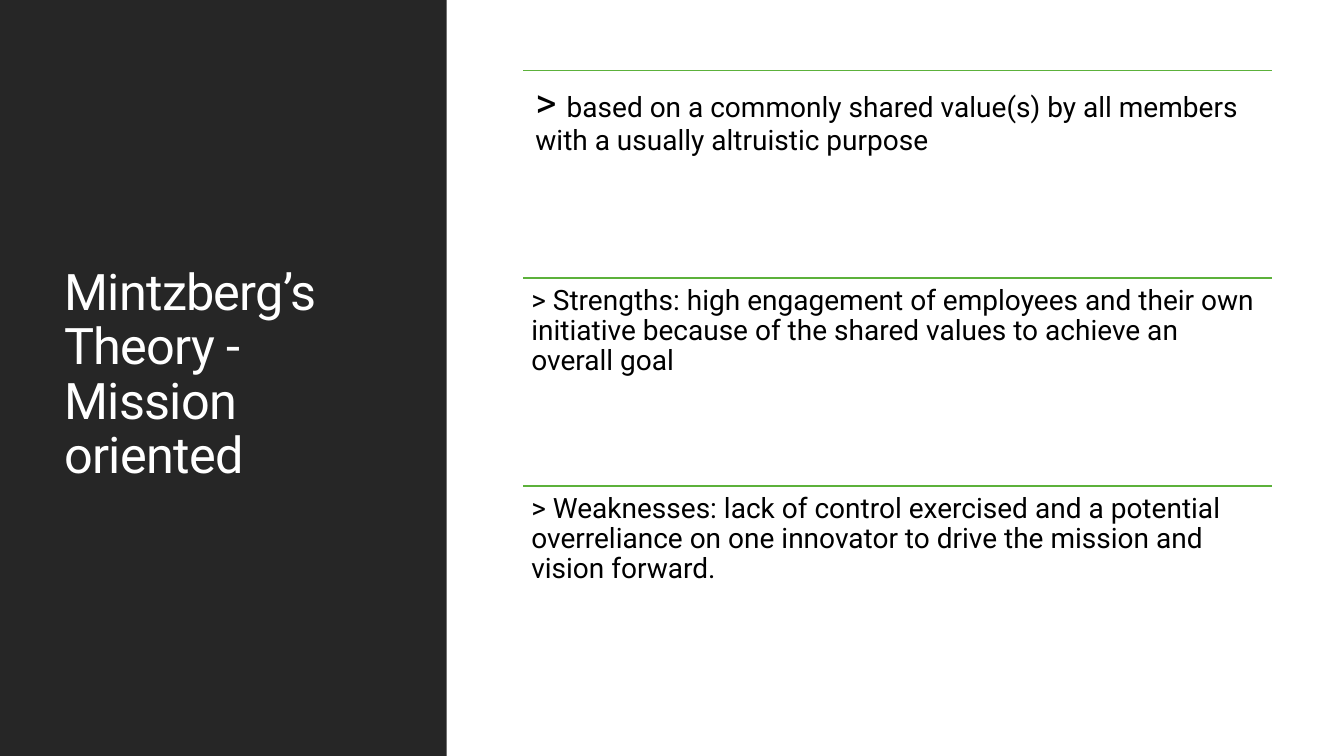
from pptx import Presentation
from pptx.dml.color import RGBColor as Rgb
from pptx.enum.shapes import MSO_CONNECTOR as Conn, MSO_SHAPE as Shape
from pptx.enum.text import MSO_ANCHOR as Anchor
from pptx.util import Inches, Pt
from lxml.etree import SubElement
from pptx.oxml.ns import qn


class Deck:
    """Holds the style and the current slide, and draws each kind of element."""

    font = "Roboto"
    colors = {"dark": "262626", "green": "5CB13B", "white": "FFFFFF", "black": "000000"}

    def __init__(self):
        self.file = Presentation()
        self.file.slide_width = Inches(13.33)
        self.file.slide_height = Inches(7.5)
        self.slide = self.file.slides.add_slide(self.file.slide_layouts[6])

    def color(self, name):
        return Rgb.from_string(self.colors[name])

    def panel(self, x, y, w, h, fill):
        box = self.slide.shapes.add_shape(
            Shape.RECTANGLE, Inches(x), Inches(y), Inches(w), Inches(h))
        box.shadow.inherit = False
        box.fill.solid()
        box.fill.fore_color.rgb = self.color(fill)
        box.line.fill.background()

    def rule(self, x, y, w):
        line = self.slide.shapes.add_connector(
            Conn.STRAIGHT, Inches(x), Inches(y), Inches(x + w), Inches(y))
        line.line.color.rgb = self.color("green")
        line.line.width = Pt(1.25)
        SubElement(line._element.spPr, qn("a:effectLst"))

    def text(self, x, y, w, h, parts, color="black", inset=0.08,
             anchor=Anchor.TOP, after=0, track=0):
        box = self.slide.shapes.add_textbox(Inches(x), Inches(y), Inches(w), Inches(h))
        frame = box.text_frame
        frame.word_wrap = True
        frame.vertical_anchor = anchor
        frame.margin_left = frame.margin_right = Inches(inset)
        frame.margin_top = frame.margin_bottom = Inches(inset)
        para = frame.paragraphs[0]
        para.line_spacing = 0.9
        para.space_after = Pt(after)
        for words, size in parts:
            run = para.add_run()
            run.text = words
            run.font.name = self.font
            run.font.size = Pt(size)
            run.font.color.rgb = self.color(color)
            if track:
                run._r.get_or_add_rPr().set("spc", str(track))


def main():
    deck = Deck()
    deck.panel(0, 0, 4.43, 7.5, "dark")
    deck.text(0.54, 0.57, 3.37, 6.31, [("Mintzberg’s Theory - Mission oriented", 36)],
              "white", 0.1, Anchor.MIDDLE, track=-50)

    points = [
        (0.12, [("> ", 29), ("based on a commonly shared value(s) by all members "
                             "with a usually altruistic purpose", 20)]),
        (0.08, [("> Strengths: high engagement of employees and their own initiative "
                 "because of the shared values to achieve an overall goal", 20)]),
        (0.08, [("> Weaknesses: lack of control exercised and a potential overreliance "
                 "on one innovator to drive the mission and vision forward.", 20)]),
    ]
    left, top, width, step = 5.19, 0.7, 7.43, 2.06
    for row, (inset, parts) in enumerate(points):
        y = top + row * step
        deck.rule(left, y, width)
        deck.text(left, y, width, step, parts, inset=inset, after=7)
    deck.file.save("out.pptx")


if __name__ == "__main__":
    main()
